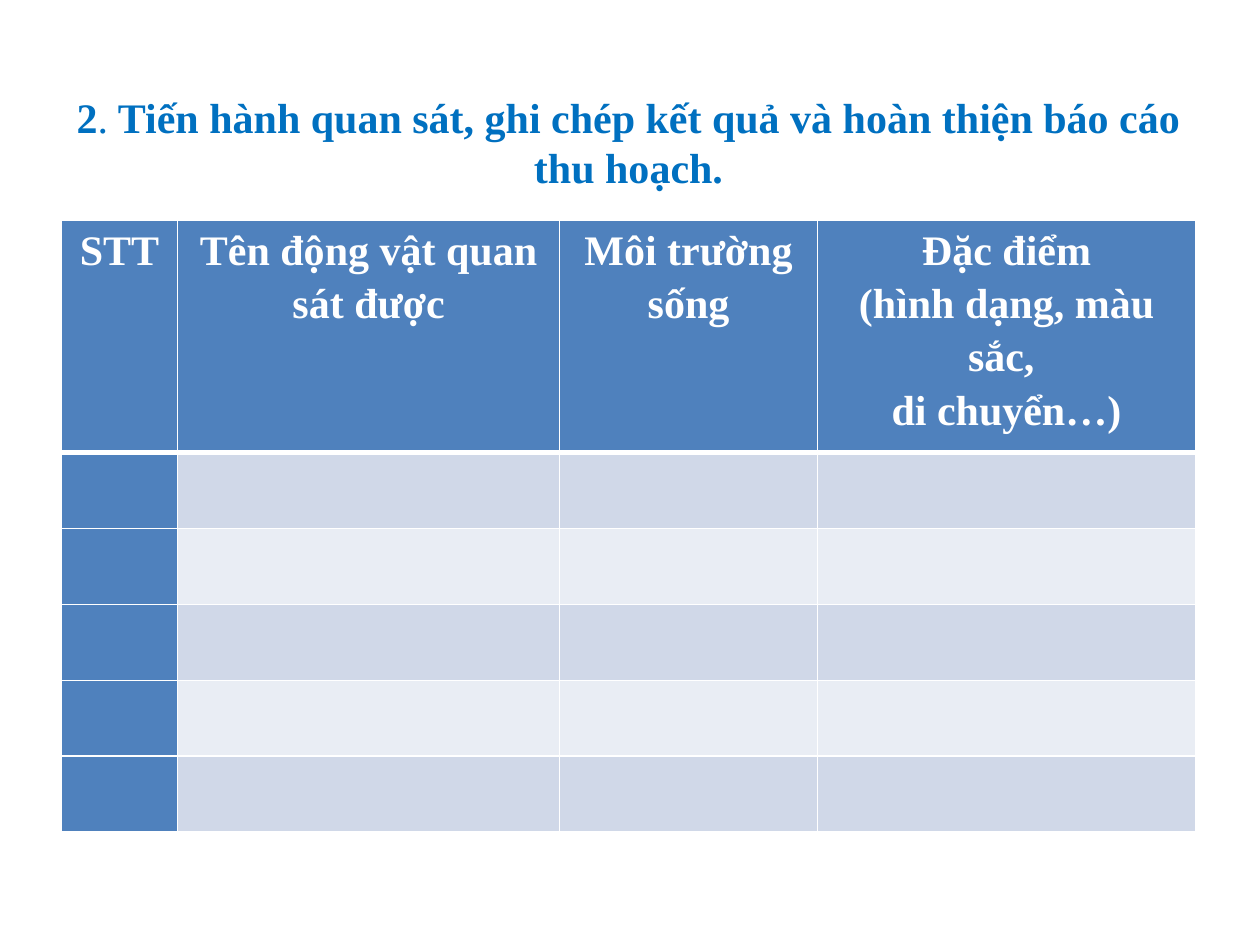
from lxml.etree import SubElement
from pptx import Presentation
from pptx.dml.color import RGBColor
from pptx.enum.text import MSO_ANCHOR, PP_ALIGN
from pptx.oxml.ns import qn
from pptx.util import Cm, Pt

COLORS = {
    "title": "0070C0",
    "header": "4F81BD",
    "band_dark": "D0D8E8",
    "band_light": "E9EDF4",
    "white": "FFFFFF",
}
LEFT, WIDTH = 1.24, 22.86
COLUMN_WIDTHS = [2.34, 7.7, 5.2, 7.62]
ROW_HEIGHTS = [4.67] + [1.53] * 5
HEADINGS = [
    ["STT"],
    ["Tên động vật quan sát được"],
    ["Môi trường sống"],
    ["Đặc điểm", "(hình dạng, màu sắc, \ndi chuyển…)"],
]


def add_span(para, text, color="white", bold=True):
    """Add text to a paragraph, turning newlines into line breaks."""
    for index, line in enumerate(text.split("\n")):
        if index:
            para.add_line_break()
        span = para.add_run()
        span.text = line
        span.font.name = "Times New Roman"
        span.font.size = Pt(24)
        span.font.bold = bold
        span.font.color.rgb = RGBColor.from_string(COLORS[color])


def add_title(page):
    """Add the centred heading of the slide."""
    box = page.shapes.add_textbox(Cm(LEFT), Cm(1.27), Cm(WIDTH), Cm(3.18))
    frame = box.text_frame
    frame.word_wrap = True
    frame.vertical_anchor = MSO_ANCHOR.MIDDLE
    para = frame.paragraphs[0]
    para.alignment = PP_ALIGN.CENTER
    add_span(para, "2", color="title")
    add_span(para, ".", color="title", bold=False)
    add_span(
        para,
        " Tiến hành quan sát, ghi chép kết quả và hoàn thiện báo cáo thu hoạch.",
        color="title",
    )


def set_borders(cell, top=1, bottom=1):
    """Draw white borders of the given point widths around a cell."""
    properties = cell._tc.get_or_add_tcPr()
    for side, width in {"L": 1, "R": 1, "T": top, "B": bottom}.items():
        line = SubElement(properties, qn(f"a:ln{side}"), w=str(Pt(width)))
        fill = SubElement(line, qn("a:solidFill"))
        SubElement(fill, qn("a:srgbClr"), val=COLORS["white"])


def set_fill(cell, color):
    """Fill a cell with a named colour."""
    cell.fill.solid()
    cell.fill.fore_color.rgb = RGBColor.from_string(COLORS[color])


def write_heading(cell, lines):
    """Write the centred paragraphs of a column heading."""
    cell.margin_left = cell.margin_right = Cm(0.18)
    cell.margin_top = cell.margin_bottom = 0
    frame = cell.text_frame
    for index, line in enumerate(lines):
        para = frame.add_paragraph() if index else frame.paragraphs[0]
        para.alignment = PP_ALIGN.CENTER
        para.line_spacing = 1.15
        add_span(para, line)


def add_report_table(page):
    """Add the observation table with headings and empty banded rows."""
    table = page.shapes.add_table(
        len(ROW_HEIGHTS), len(COLUMN_WIDTHS),
        Cm(LEFT), Cm(4.45), Cm(WIDTH), Cm(sum(ROW_HEIGHTS)),
    ).table
    table.first_col = True
    for column, width in zip(table.columns, COLUMN_WIDTHS):
        column.width = Cm(width)
    for number, (row, height) in enumerate(zip(table.rows, ROW_HEIGHTS)):
        row.height = Cm(height)
        band = "band_dark" if number % 2 else "band_light"
        for position, cell in enumerate(row.cells):
            set_borders(
                cell,
                top=3 if number == 1 else 1,
                bottom=3 if number == 0 else 1,
            )
            set_fill(cell, "header" if number == 0 or position == 0 else band)
    for cell, lines in zip(table.rows[0].cells, HEADINGS):
        write_heading(cell, lines)


def main():
    """Build the slide and save the deck."""
    deck = Presentation()
    deck.slide_width, deck.slide_height = Cm(25.4), Cm(19.05)
    page = deck.slides.add_slide(deck.slide_layouts[6])
    add_title(page)
    add_report_table(page)
    deck.save("out.pptx")


if __name__ == "__main__":
    main()
